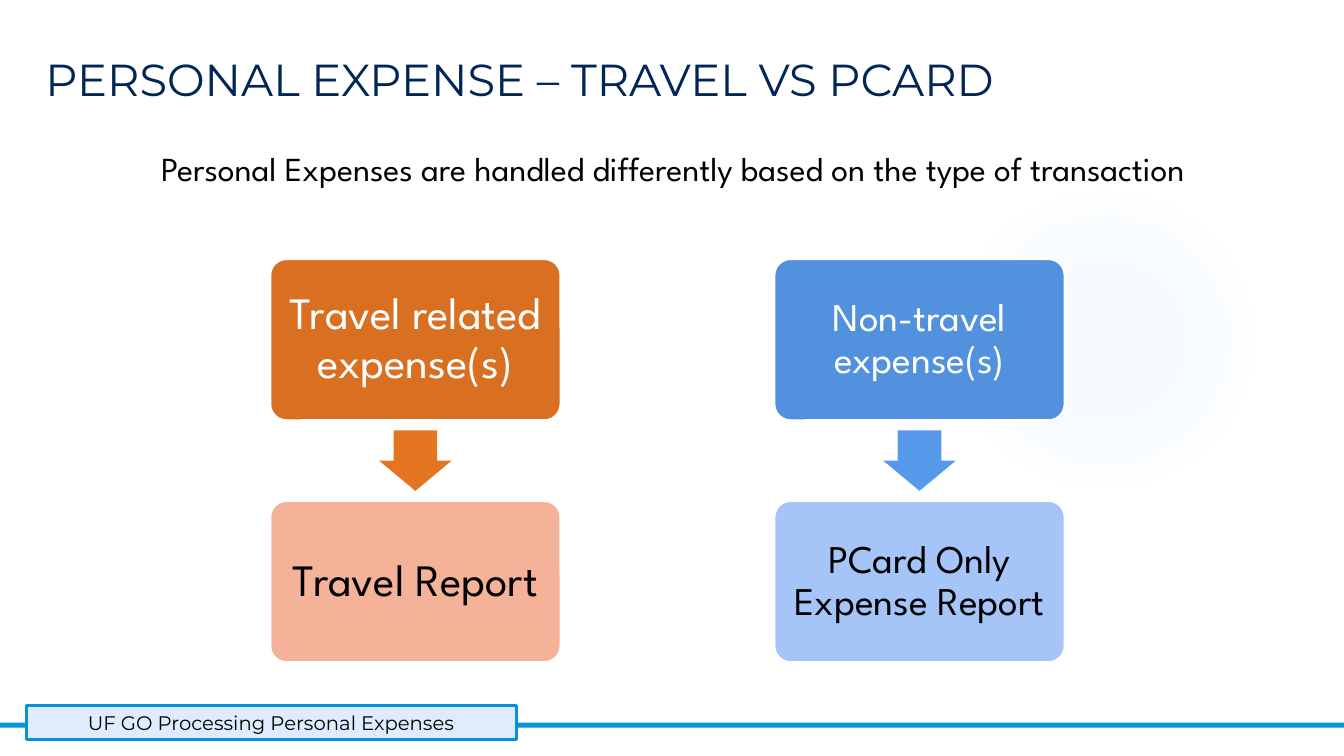
import pptx
import pptx.dml.color
import pptx.enum.shapes
import pptx.enum.text
import pptx.oxml
import pptx.oxml.ns
import pptx.util

Inches = pptx.util.Inches
Pt = pptx.util.Pt
SHAPES = pptx.enum.shapes.MSO_SHAPE
ANCHOR = pptx.enum.text.MSO_ANCHOR
ALIGN = pptx.enum.text.PP_ALIGN

TITLE = "PERSONAL EXPENSE – TRAVEL VS PCARD"
INTRO = "Personal Expenses are handled differently based on the type of transaction"
FOOTER = "UF GO Processing Personal Expenses"
FLOWS = [
    {"steps": [("Travel related expense(s)", "D96F21", "FFFFFF"),
               ("Travel Report", "F4B299", "000000")],
     "arrow": "E47522", "size": 32, "inset": 0.13},
    {"steps": [("Non-travel expense(s)", "5291DE", "FFFFFF"),
               ("PCard Only Expense Report", "A5C4F8", "000000")],
     "arrow": "5699EA", "size": 28, "inset": 0.12},
]

HEADING_FONT, BODY_FONT = "Montserrat", "League Spartan"
ACCENT = "0593D7"
GLOW_COLOR = "7AC4F0"
GLOW_STOPS = [(0, 7), (36, 6), (69, 0)]  # position and opacity, in percent

FLOW_LEFT, FLOW_PITCH = 2.68, 5.0
STEP_TOP, STEP_PITCH = 2.57, 2.4
STEP_WIDTH, STEP_HEIGHT = 2.88, 1.6
ARROW_WIDTH, ARROW_HEIGHT = 0.72, 0.6


def rgb(color):
    return pptx.dml.color.RGBColor.from_string(color)


def add_block(slide, kind, box, fill=None, line=None, line_width=0):
    shape = slide.shapes.add_shape(kind, *map(Inches, box))
    shape.shadow.inherit = False
    if fill:
        shape.fill.solid()
        shape.fill.fore_color.rgb = rgb(fill)
    if line:
        shape.line.color.rgb = rgb(line)
        shape.line.width = Pt(line_width)
    else:
        shape.line.fill.background()
    return shape


def write(shape, text, font, size, color, align=ALIGN.CENTER, anchor=ANCHOR.MIDDLE):
    frame = shape.text_frame
    frame.word_wrap = True
    frame.vertical_anchor = anchor
    paragraph = frame.paragraphs[0]
    paragraph.alignment = align
    run = paragraph.add_run()
    run.text = text
    run.font.name = font
    run.font.size = Pt(size)
    run.font.color.rgb = rgb(color)
    return frame


def add_glow(slide):
    """Add the soft circle that fades out towards its edge."""
    glow = add_block(slide, SHAPES.OVAL, (9.41, 1.83, 3.08, 3.08), GLOW_COLOR)
    stops = "".join(
        f'<a:gs pos="{position * 1000}"><a:srgbClr val="{GLOW_COLOR}">'
        f'<a:alpha val="{opacity * 1000}"/></a:srgbClr></a:gs>'
        for position, opacity in GLOW_STOPS)
    gradient = pptx.oxml.parse_xml(
        f'<a:gradFill {pptx.oxml.ns.nsdecls("a")}><a:gsLst>{stops}</a:gsLst>'
        '<a:path path="circle">'
        '<a:fillToRect l="50000" t="50000" r="50000" b="50000"/>'
        '</a:path></a:gradFill>')
    properties = glow.element.spPr
    properties.replace(properties.find(pptx.oxml.ns.qn("a:solidFill")), gradient)


def add_flow(slide, left, flow):
    for row, (text, fill, color) in enumerate(flow["steps"]):
        step = add_block(
            slide, SHAPES.ROUNDED_RECTANGLE,
            (left, STEP_TOP + row * STEP_PITCH, STEP_WIDTH, STEP_HEIGHT),
            fill, "FFFFFF", 1.5)
        step.adjustments[0] = 0.1
        frame = write(step, text, BODY_FONT, flow["size"], color)
        frame.margin_left = frame.margin_right = Inches(flow["inset"])
        frame.margin_top = frame.margin_bottom = Inches(flow["inset"])
        frame.paragraphs[0].line_spacing = 0.9
    gap = STEP_PITCH - STEP_HEIGHT
    arrow = add_block(
        slide, SHAPES.DOWN_ARROW,
        (left + (STEP_WIDTH - ARROW_WIDTH) / 2,
         STEP_TOP + STEP_HEIGHT + (gap - ARROW_HEIGHT) / 2,
         ARROW_WIDTH, ARROW_HEIGHT), flow["arrow"])
    arrow.adjustments[0] = 0.6
    arrow.adjustments[1] = 0.5


def main():
    presentation = pptx.Presentation()
    presentation.slide_width = Inches(13.33)
    presentation.slide_height = Inches(7.5)
    slide = presentation.slides.add_slide(presentation.slide_layouts[5])

    add_glow(slide)
    title = slide.shapes.title
    title.left, title.top, title.width, title.height = map(
        Inches, (0.35, 0.46, 12.55, 0.66))
    write(title, TITLE, HEADING_FONT, 32, "002657", ALIGN.LEFT, ANCHOR.TOP)
    intro = slide.shapes.add_textbox(*map(Inches, (0.92, 1.42, 11.51, 0.6)))
    write(intro, INTRO, BODY_FONT, 24, "000000", anchor=ANCHOR.TOP)

    add_block(slide, SHAPES.RECTANGLE, (0, 7.17, 13.33, 0.05), ACCENT)
    footer = add_block(slide, SHAPES.RECTANGLE, (0.26, 7, 4.86, 0.34),
                       "DEECFD", ACCENT, 2.25)
    write(footer, FOOTER, HEADING_FONT, 14, "000000")

    for column, flow in enumerate(FLOWS):
        add_flow(slide, FLOW_LEFT + column * FLOW_PITCH, flow)

    presentation.save("out.pptx")


if __name__ == "__main__":
    main()
